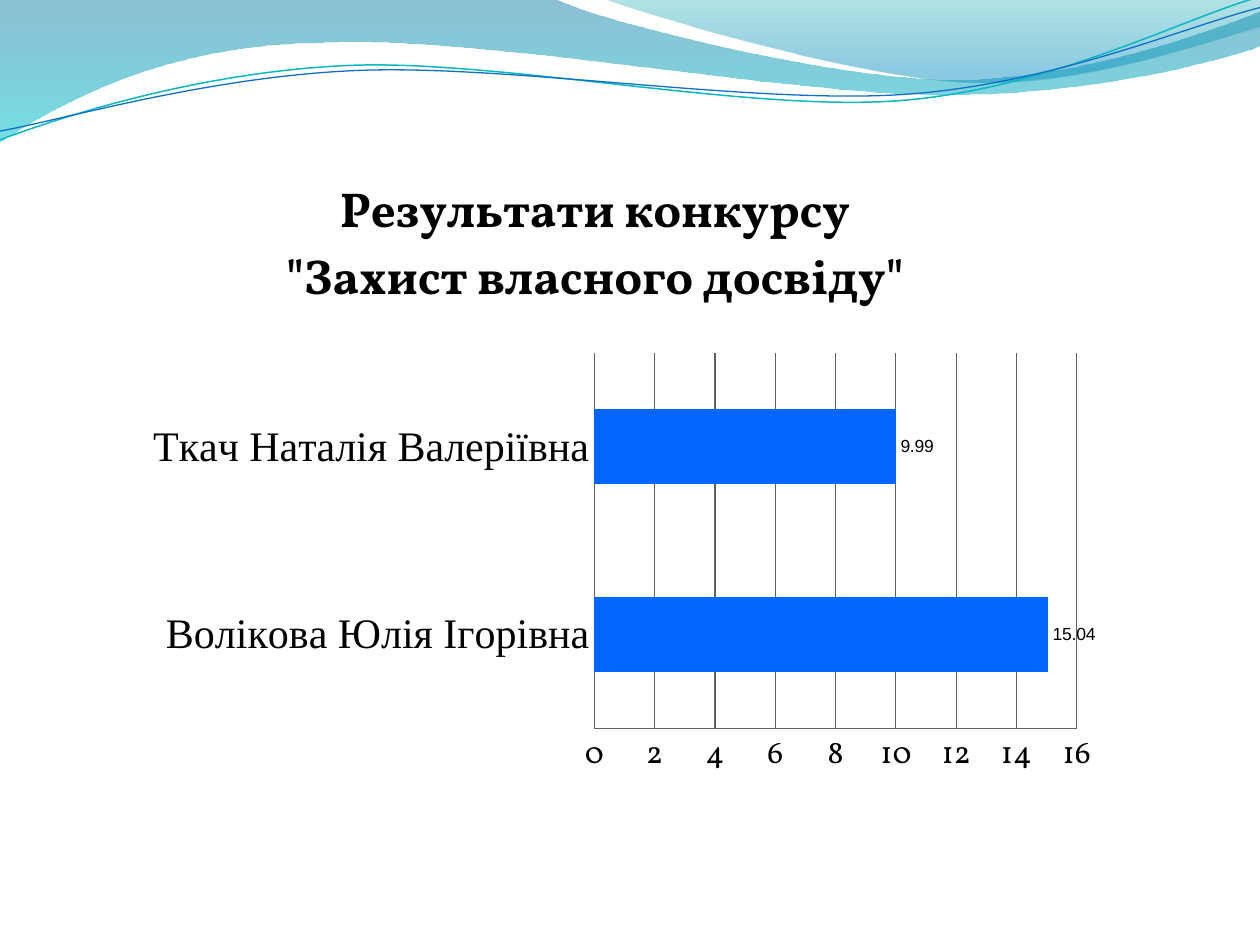
from dataclasses import dataclass

from lxml import etree
from pptx import Presentation
from pptx.chart.data import CategoryChartData
from pptx.dml.color import RGBColor
from pptx.enum.chart import XL_CHART_TYPE, XL_LABEL_POSITION, XL_TICK_MARK
from pptx.enum.text import PP_ALIGN
from pptx.oxml import parse_xml
from pptx.oxml.ns import nsdecls, qn
from pptx.util import Inches, Pt

BAR = XL_CHART_TYPE.BAR_CLUSTERED
OUTSIDE_END = XL_LABEL_POSITION.OUTSIDE_END
NO_TICK = XL_TICK_MARK.NONE


@dataclass(frozen=True)
class Theme:
    text: RGBColor = RGBColor(0, 0, 0)
    bar: RGBColor = RGBColor(0x00, 0x66, 0xFF)
    series: RGBColor = RGBColor(0x0F, 0x6F, 0xC6)
    grid: RGBColor = RGBColor(0x60, 0x60, 0x60)
    display_font: str = "Vollkorn"
    name_font: str = "Times New Roman"
    label_font: str = "Arial"
    title_size: Pt = Pt(28)
    name_size: Pt = Pt(24)
    scale_size: Pt = Pt(18)
    label_size: Pt = Pt(10)


theme = Theme()


def add_curve(slide, start, segments, closed):
    """Draw straight (one point) and cubic Bezier (three points) segments, in inches."""
    outline = slide.shapes.build_freeform(*(Inches(value) for value in start))
    outline.add_line_segments(
        [(Inches(x), Inches(y)) for segment in segments for x, y in segment], close=closed)
    curve = outline.convert_to_shape()
    curve.shadow.inherit = False
    lines = iter(list(curve._element.iter(qn("a:lnTo"))))
    for segment in segments:
        first, *others = [next(lines) for _ in segment]
        if others:
            first.tag = qn("a:cubicBezTo")
        for line in others:
            first.append(line[0])
            line.getparent().remove(line)
    return curve


def set_layout(element, mode, **fractions):
    """Place a chart part by fractions of the chart area."""
    layout = element.find(qn("c:layout"))
    if layout is None:
        layout = etree.Element(qn("c:layout"))
        text = element.find(qn("c:tx"))
        element.insert(0 if text is None else element.index(text) + 1, layout)
    for child in list(layout):
        layout.remove(child)
    manual = etree.SubElement(layout, qn("c:manualLayout"))
    if mode == "inner":
        etree.SubElement(manual, qn("c:layoutTarget")).set("val", mode)
    for axis in "xy":
        etree.SubElement(manual, qn(f"c:{axis}Mode")).set("val", "edge")
    for key, value in fractions.items():
        etree.SubElement(manual, qn(f"c:{key}")).set("val", str(value))


prs = Presentation()
prs.slide_width, prs.slide_height = Inches(10), Inches(7.5)
slide = prs.slides.add_slide(prs.slide_layouts[6])

# Wave bands: start, segments, gradient stops (position, colour, opacity in percent)
bands = [
    ((0, -0.01),
     [[(4.4, -0.01)],
      [(4.76, 0.17), (6.64, 0.63), (7.58, 0.63)],
      [(8.53, 0.63), (9.58, 0.26), (10, 0.09)],
      [(10.01, 0.36)],
      [(9.83, 0.44), (8.7, 0.76), (7.46, 0.75)],
      [(6.22, 0.75), (3.82, 0.28), (2.57, 0.34)],
      [(1.29, 0.35), (0.46, 0.83), (-0.01, 1.13)]],
     [(0, "0074A1", 45), (1, "00C6CF", 55)]),
    ((4.79, -0.01),
     [[(5.09, 0.11), (6.82, 0.62), (7.69, 0.65)],
      [(8.56, 0.69), (9.61, 0.32), (10, 0.21)],
      [(10, 0)]],
     [(0, "00A1A9", 30), (0.8, "008BBF", 45)]),
]
for start, segments, stops in bands:
    band = add_curve(slide, start, segments, closed=True)
    band.line.fill.background()
    band.fill.gradient()
    band.fill.gradient_angle = 270
    for stop, (position, color, _) in zip(band.fill.gradient_stops, stops):
        stop.position = position
        stop.color.rgb = RGBColor.from_string(color)
    colors = band._element.spPr.findall(f".//{qn('a:gs')}/{qn('a:srgbClr')}")
    for color, (_, _, opacity) in zip(colors, stops):
        etree.SubElement(color, qn("a:alpha")).set("val", str(opacity * 1000))

# Wave lines: start, segments, colour, width
waves = [
    ((0, 1.11),
     [[(0.48, 0.93), (1.58, 0.57), (2.77, 0.52)],
      [(3.95, 0.47), (5.93, 0.89), (7.13, 0.8)],
      [(8.33, 0.71), (9.38, 0.15), (9.98, -0.02)]],
     "0AB8BF", 0.85),
    ((0, 1.04),
     [[(0.47, 0.96), (1.64, 0.61), (2.83, 0.56)],
      [(4.03, 0.51), (5.97, 0.83), (7.17, 0.75)],
      [(8.36, 0.67), (9.41, 0.21), (10, 0.06)]],
     "0F6FC6", 0.75),
]
for start, segments, color, width in waves:
    wave = add_curve(slide, start, segments, closed=False)
    wave.fill.background()
    wave.line.color.rgb = RGBColor.from_string(color)
    wave.line.width = Pt(width)

# Contest results
results = CategoryChartData()
results.categories = ["Волікова Юлія Ігорівна", "Ткач Наталія Валеріївна"]
results.add_series("Series 1", (15.04, 9.99))
chart = slide.shapes.add_chart(
    BAR, Inches(1.06), Inches(1.39), Inches(7.75), Inches(4.89), results).chart
chart.has_legend = False
chart.font.name = theme.display_font
chart.font.size = theme.label_size
chart.font.color.rgb = theme.text
chart._chartSpace.find(qn("c:txPr")).addprevious(parse_xml(
    f'<c:spPr {nsdecls("c", "a")}><a:solidFill><a:srgbClr val="FFFFFF"/></a:solidFill>'
    '<a:ln><a:noFill/></a:ln></c:spPr>'))

heading = chart.chart_title.text_frame
heading.text = 'Результати конкурсу\n"Захист власного досвіду"'
for paragraph in heading.paragraphs:
    paragraph.alignment = PP_ALIGN.CENTER
    paragraph.font.name = theme.display_font
    paragraph.font.size = theme.title_size
    paragraph.font.bold = True
    paragraph.font.color.rgb = theme.text
chart.chart_title.include_in_layout = False
set_layout(chart.chart_title._element, "edge", x=0.152, y=0)
set_layout(chart._chartSpace.chart.plotArea, "inner", x=0.472, y=0.289, w=0.494, h=0.609)

plot = chart.plots[0]
plot.vary_by_categories = False
plot.gap_width = 150
scores = plot.series[0]
scores.format.fill.solid()
scores.format.fill.fore_color.rgb = theme.series
for index in range(len(results.categories)):
    point = scores.points[index]
    point.format.fill.solid()
    point.format.fill.fore_color.rgb = theme.bar
    point.data_label.position = OUTSIDE_END
    point.data_label.font.name = theme.label_font
    point.data_label.font.size = theme.label_size

for axis, font, size in ((chart.category_axis, theme.name_font, theme.name_size),
                         (chart.value_axis, theme.display_font, theme.scale_size)):
    axis.major_tick_mark = axis.minor_tick_mark = NO_TICK
    axis.format.line.color.rgb = theme.grid
    axis.tick_labels.font.name = font
    axis.tick_labels.font.size = size
    axis.tick_labels.font.color.rgb = theme.text
scale = chart.value_axis
scale.minimum_scale, scale.maximum_scale, scale.major_unit = 0, 16, 2
scale.has_major_gridlines = True
scale.major_gridlines.format.line.color.rgb = theme.grid

prs.save("out.pptx")
